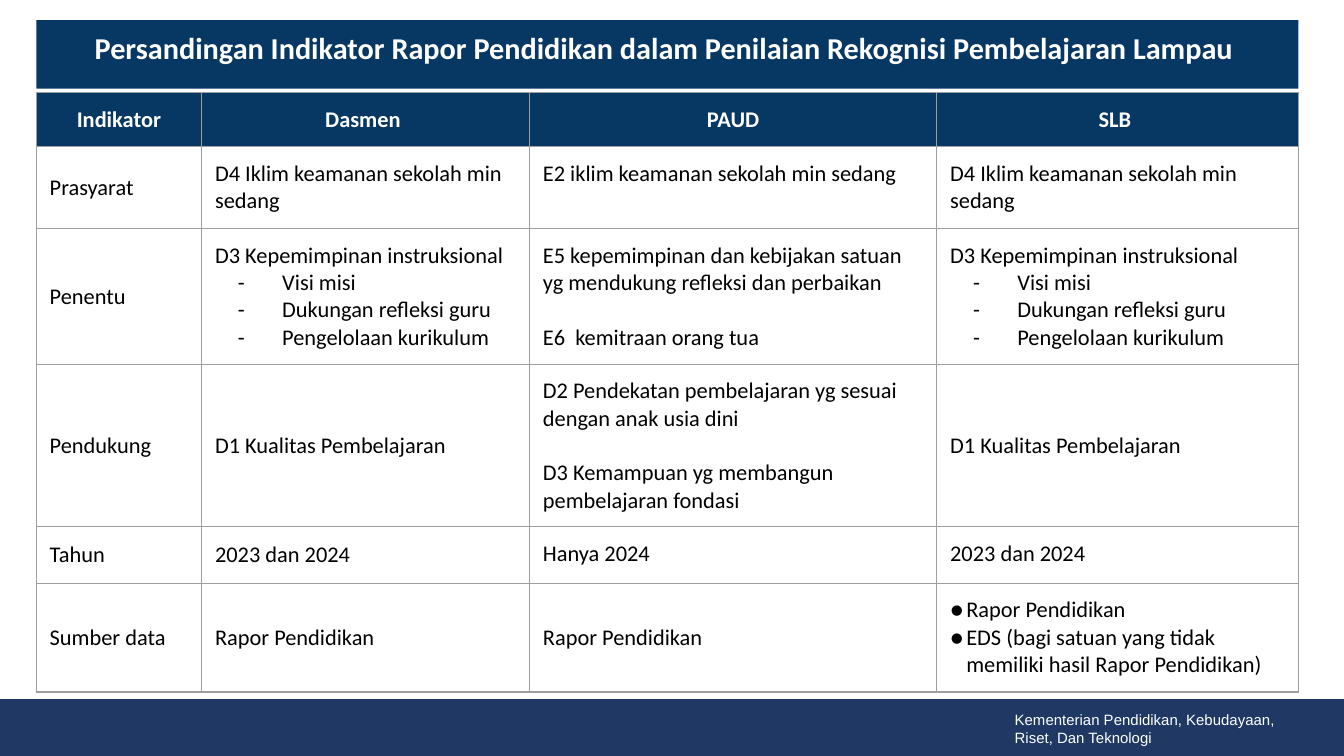
import dataclasses

import pptx
import pptx.dml.color
import pptx.enum.shapes
import pptx.enum.text
import pptx.oxml
import pptx.oxml.ns
import pptx.util

Inches, Pt = pptx.util.Inches, pptx.util.Pt
RGB = pptx.dml.color.RGBColor.from_string
ALIGN = pptx.enum.text.PP_ALIGN
ANCHOR = pptx.enum.text.MSO_ANCHOR


@dataclasses.dataclass(frozen=True)
class Theme:
    navy: str = "073763"
    footer: str = "1F3864"
    white: str = "FFFFFF"
    ink: str = "000000"
    rule: str = "9E9E9E"
    font: str = "Calibri"
    footer_font: str = "Arial"
    title_size: float = 16.2
    table_size: float = 12
    footer_size: float = 8
    rule_width: float = 0.75
    inset: float = 0.1


@dataclasses.dataclass(frozen=True)
class Item:
    """A list entry with its bullet sign, left indent and hanging indent."""
    text: str
    sign: str
    left: float
    hanging: float


THEME = Theme()
WIDTH = 10
HEIGHT = WIDTH * 9 / 16
MARGIN = 0.27
FOOTER_TOP = 5.21
COLUMNS = [1.23, 2.44, 3.03, 2.69]
ROWS = [0.4, 0.61, 1.01, 1.21, 0.42, 0.81]

TITLE = "Persandingan Indikator Rapor Pendidikan dalam Penilaian Rekognisi Pembelajaran Lampau "
MINISTRY = "Kementerian Pendidikan, Kebudayaan, Riset, Dan Teknologi"
SAFETY = ["D4 Iklim keamanan sekolah min sedang"]
LEADERSHIP = ["D3 Kepemimpinan instruksional"] + [
    Item(text, "-", 0.5, 0.33)
    for text in ("Visi misi", "Dukungan refleksi guru", "Pengelolaan kurikulum")]
QUALITY = ["D1 Kualitas Pembelajaran"]
YEARS = ["2023 dan 2024"]
REPORT = ["Rapor Pendidikan"]
SOURCES = [Item(text, "●", 0.12, 0.15) for text in (
    "Rapor Pendidikan", "EDS (bagi satuan yang tidak memiliki hasil Rapor Pendidikan)")]

INDICATORS = [
    [["Indikator"], ["Dasmen "], ["PAUD"], ["SLB "]],
    [["Prasyarat"], SAFETY, ["E2 iklim keamanan sekolah min sedang"], SAFETY],
    [["Penentu"], LEADERSHIP,
     ["E5 kepemimpinan dan kebijakan satuan yg mendukung refleksi dan perbaikan",
      "E6  kemitraan orang tua"], LEADERSHIP],
    [["Pendukung"], QUALITY,
     ["D2 Pendekatan pembelajaran yg sesuai dengan anak usia dini",
      "D3 Kemampuan yg membangun pembelajaran fondasi"], QUALITY],
    [["Tahun"], YEARS, ["Hanya 2024"], YEARS],
    [["Sumber data"], REPORT, REPORT, SOURCES],
]
TOP_ANCHORED = {(1, 2), (2, 2), (3, 2), (4, 2), (4, 3), (5, 3)}


def apply(target, formats):
    for name, value in formats.items():
        setattr(target, name, value)


def margins(horizontal, vertical):
    sides = dict.fromkeys(("margin_left", "margin_right"), Inches(horizontal))
    return sides | dict.fromkeys(("margin_top", "margin_bottom"), Inches(vertical))


def write(paragraph, text, size, color, font=THEME.font, bold=False):
    run = paragraph.add_run()
    run.text = text
    apply(run.font, {"name": font, "size": Pt(size), "bold": bold})
    run.font.color.rgb = RGB(color)


def indent(paragraph, left, hanging=0):
    properties = paragraph._p.get_or_add_pPr()
    properties.set("marL", str(Inches(left)))
    properties.set("indent", str(-Inches(hanging)))
    return properties


def add_bullet(paragraph, item):
    properties = indent(paragraph, item.left, item.hanging)
    ns = pptx.oxml.ns.nsdecls("a")
    for xml in (f'<a:buClr {ns}><a:srgbClr val="{THEME.ink}"/></a:buClr>',
                f'<a:buFont {ns} typeface="{THEME.font}"/>',
                f'<a:buChar {ns} char="{item.sign}"/>'):
        properties.append(pptx.oxml.parse_xml(xml))


def add_borders(cell):
    properties = cell._tc.get_or_add_tcPr()
    for side in ("lnL", "lnR", "lnT", "lnB"):
        properties.append(pptx.oxml.parse_xml(
            f'<a:{side} {pptx.oxml.ns.nsdecls("a")} w="{Pt(THEME.rule_width)}">'
            f'<a:solidFill><a:srgbClr val="{THEME.rule}"/></a:solidFill></a:{side}>'))


def fill_cell(cell, entries, header, anchor):
    apply(cell, margins(THEME.inset, THEME.inset) | {"vertical_anchor": anchor})
    add_borders(cell)
    if header:
        cell.fill.solid()
        cell.fill.fore_color.rgb = RGB(THEME.navy)
    else:
        cell.fill.background()
    for index, entry in enumerate(entries):
        frame = cell.text_frame
        paragraph = frame.add_paragraph() if index else frame.paragraphs[0]
        paragraph.alignment = ALIGN.CENTER if header else ALIGN.LEFT
        if isinstance(entry, Item):
            add_bullet(paragraph, entry)
        elif index:
            paragraph.space_before = Pt(14.6)
        write(paragraph, getattr(entry, "text", entry), THEME.table_size,
              THEME.white if header else THEME.ink, bold=header)


def add_indicator_table(slide):
    table = slide.shapes.add_table(
        len(ROWS), len(COLUMNS), Inches(MARGIN), Inches(0.69),
        Inches(sum(COLUMNS)), Inches(sum(ROWS))).table
    table.horz_banding = False
    for column, width in zip(table.columns, COLUMNS):
        column.width = Inches(width)
    for row, height in zip(table.rows, ROWS):
        row.height = Inches(height)
    for r, indicator in enumerate(INDICATORS):
        for c, entries in enumerate(indicator):
            top = r == 0 or (r, c) in TOP_ANCHORED
            fill_cell(table.cell(r, c), entries, r == 0, ANCHOR.TOP if top else ANCHOR.MIDDLE)


def set_title(slide):
    title = slide.shapes.title
    apply(title, {"left": Inches(MARGIN), "top": Inches(0.15),
                  "width": Inches(sum(COLUMNS)), "height": Inches(0.51)})
    title.fill.solid()
    title.fill.fore_color.rgb = RGB(THEME.navy)
    apply(title.text_frame, margins(THEME.inset, THEME.inset) | {
        "vertical_anchor": ANCHOR.TOP, "word_wrap": True,
        "auto_size": pptx.enum.text.MSO_AUTO_SIZE.NONE})
    paragraph = title.text_frame.paragraphs[0]
    apply(paragraph, {"alignment": ALIGN.CENTER, "line_spacing": 0.9})
    write(paragraph, TITLE, THEME.title_size, THEME.white, bold=True)


def add_footer(slide):
    band = slide.shapes.add_shape(
        pptx.enum.shapes.MSO_SHAPE.RECTANGLE, 0, Inches(FOOTER_TOP),
        Inches(WIDTH), Inches(HEIGHT - FOOTER_TOP))
    band.shadow.inherit = False
    band.fill.solid()
    band.fill.fore_color.rgb = band.line.color.rgb = RGB(THEME.footer)
    band.line.width = Pt(1)
    ministry = slide.shapes.add_textbox(Inches(7.38), Inches(5.25), Inches(2.38), Inches(0.3))
    apply(ministry.text_frame, margins(0.07, 0.04) | {"word_wrap": True})
    paragraph = ministry.text_frame.paragraphs[0]
    indent(paragraph, 0.1)
    write(paragraph, MINISTRY, THEME.footer_size, THEME.white, THEME.footer_font)


def main():
    deck = pptx.Presentation()
    apply(deck, {"slide_width": Inches(WIDTH), "slide_height": Inches(HEIGHT)})
    slide = deck.slides.add_slide(deck.slide_layouts.get_by_name("Title Only"))
    add_footer(slide)
    set_title(slide)
    add_indicator_table(slide)
    deck.save("out.pptx")


if __name__ == "__main__":
    main()
